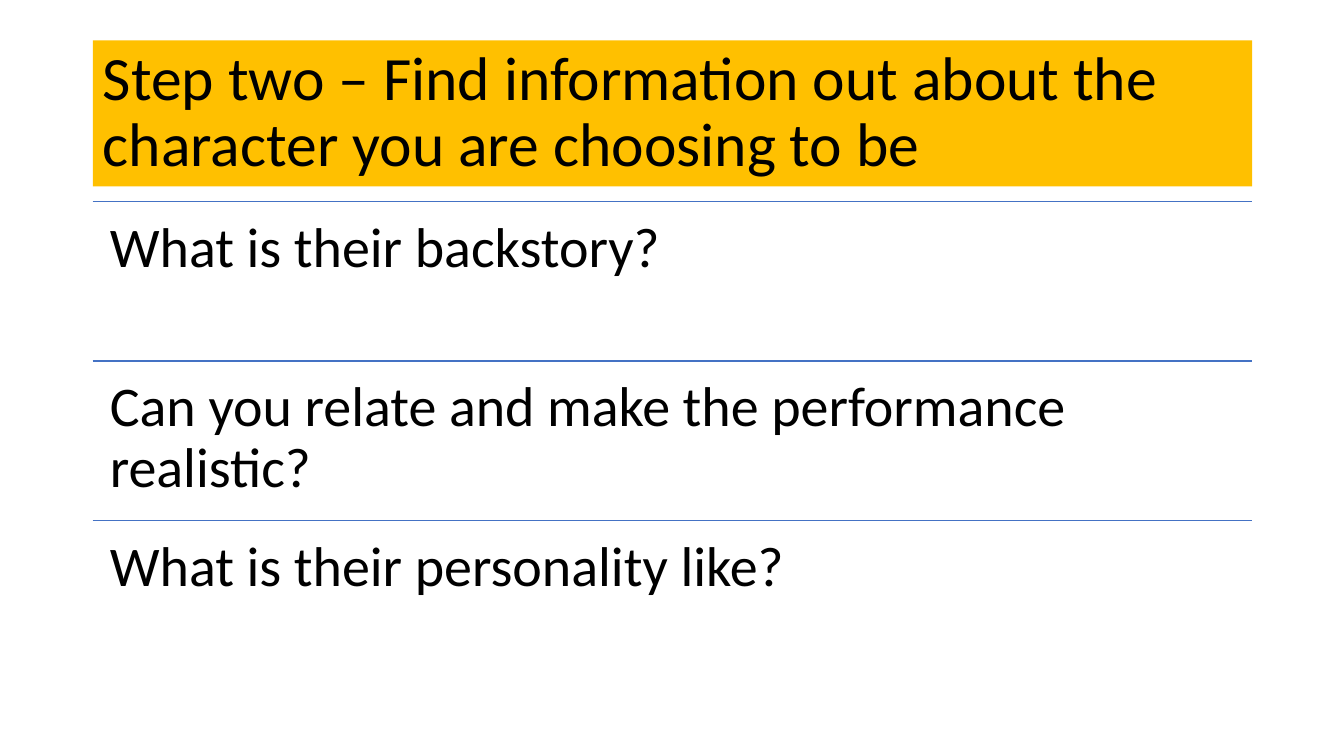
from pptx import Presentation
from pptx.dml.color import RGBColor as RGB
from pptx.enum.shapes import MSO_CONNECTOR as Connector
from pptx.enum.text import MSO_ANCHOR as Anchor, MSO_AUTO_SIZE as AutoSize, PP_ALIGN as Align
from pptx.oxml.ns import qn
from pptx.util import Inches, Pt
from lxml import etree

COLORS = {"banner": "FFC000", "rule": "4472C4", "text": "000000"}
LEFT, WIDTH = Inches(0.92), Inches(11.5)
ROWS_TOP, ROWS_HEIGHT = Inches(2), Inches(4.75)

prs = Presentation()
prs.slide_width, prs.slide_height = Inches(13.33), Inches(7.5)
slide = prs.slides.add_slide(prs.slide_layouts[5])


def format_text(frame, text, size):
    frame.word_wrap = True
    frame.auto_size = AutoSize.NONE
    frame.text = text
    paragraph = frame.paragraphs[0]
    paragraph.alignment = Align.LEFT
    paragraph.line_spacing = 0.9
    paragraph.font.name = "Calibri"
    paragraph.font.size = Pt(size)
    paragraph.font.color.rgb = RGB.from_string(COLORS["text"])


# Title banner
title = slide.shapes.title
title.left, title.top, title.width, title.height = LEFT, Inches(0.4), WIDTH, Inches(1.45)
title.fill.solid()
title.fill.fore_color.rgb = RGB.from_string(COLORS["banner"])
title.text_frame.vertical_anchor = Anchor.MIDDLE
format_text(title.text_frame,
            "Step two – Find information out about the character you are choosing to be", 44)

# Questions, each under a thin rule
questions = [
    "What is their backstory?",
    "Can you relate and make the performance realistic?",
    "What is their personality like?",
]
row_height = ROWS_HEIGHT // len(questions)
for row, text in enumerate(questions):
    top = ROWS_TOP + row * row_height

    rule = slide.shapes.add_connector(Connector.STRAIGHT, LEFT, top, LEFT + WIDTH, top)
    rule.line.color.rgb = RGB.from_string(COLORS["rule"])
    rule.line.width = Pt(1)
    etree.SubElement(rule._element.spPr, qn("a:effectLst"))

    question = slide.shapes.add_textbox(LEFT, top, WIDTH, row_height).text_frame
    question.margin_left = question.margin_right = Inches(0.17)
    question.margin_top = question.margin_bottom = Inches(0.17)
    question.vertical_anchor = Anchor.TOP
    format_text(question, text, 40)

prs.save("out.pptx")
